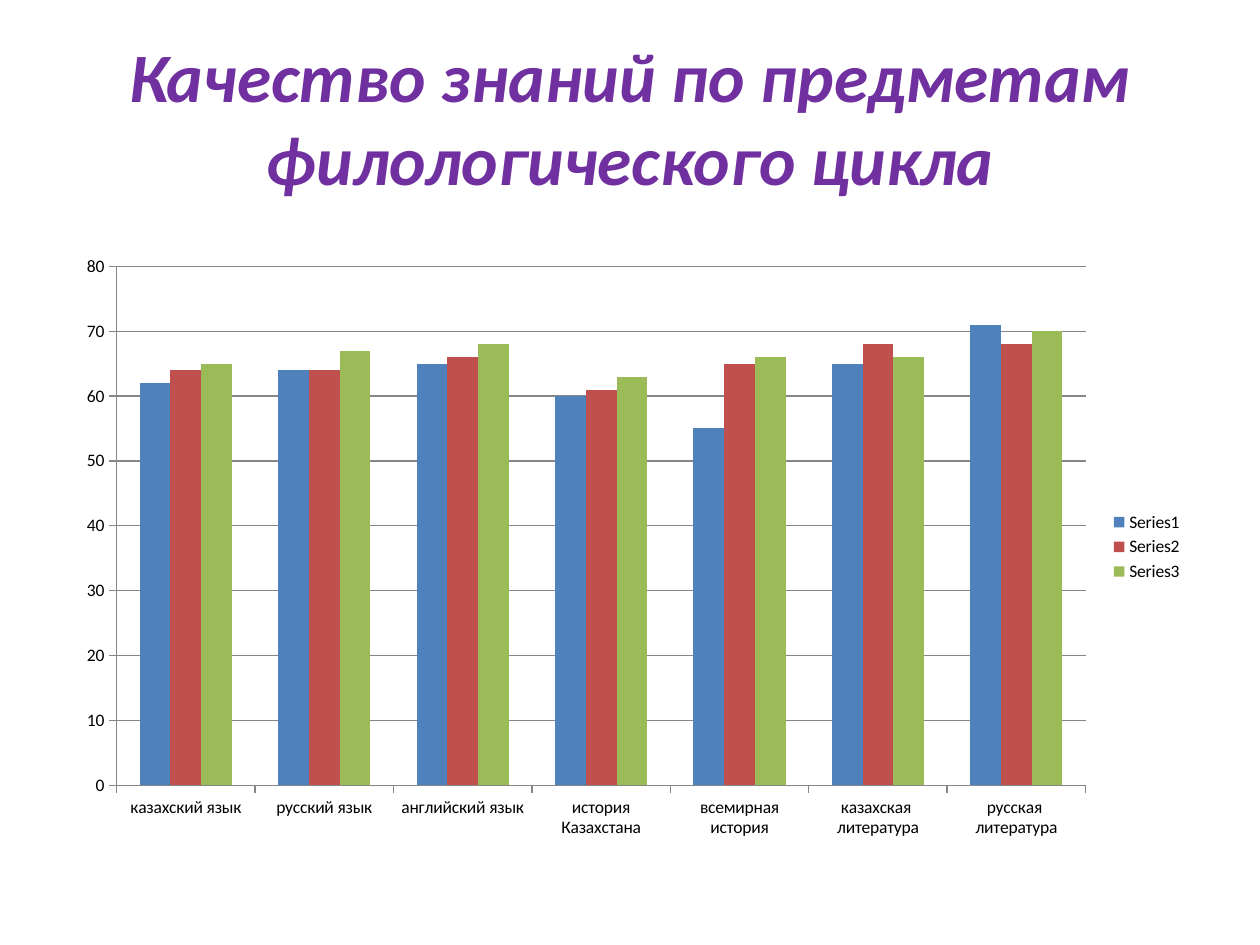
"""Build a slide that charts knowledge quality in the language and history subjects."""
from dataclasses import dataclass

from pptx import Presentation
from pptx import util as u
from pptx.chart import data as chart_data
from pptx.dml.color import RGBColor
from pptx.enum import chart as charts
from pptx.enum import text

FONT = "Calibri"
SUBJECTS = ["казахский язык", "русский язык", "английский язык", "история Казахстана",
            "всемирная история", "казахская  литература", "русская  литература"]


@dataclass
class Series:
    name: str
    colour: str
    values: list[int]


SERIES = [
    Series("Series1", "4F81BD", [62, 64, 65, 60, 55, 65, 71]),
    Series("Series2", "C0504D", [64, 64, 66, 61, 65, 68, 68]),
    Series("Series3", "9BBB59", [65, 67, 68, 63, 66, 66, 70]),
]


def rgb(colour: str) -> RGBColor:
    return RGBColor.from_string(colour)


def style_font(font, size: float, colour: str) -> None:
    font.name = FONT
    font.size = u.Pt(size)
    font.color.rgb = rgb(colour)


def style_line(line) -> None:
    line.color.rgb = rgb("868686")
    line.width = u.Pt(0.75)


def add_title(page, wording: str) -> None:
    box = page.shapes.title
    box.left, box.top = u.Inches(0.5), u.Inches(0.3)
    box.width, box.height = u.Inches(9), u.Inches(1.25)
    frame = box.text_frame
    frame.word_wrap = True
    frame.auto_size = text.MSO_AUTO_SIZE.NONE
    frame.vertical_anchor = text.MSO_ANCHOR.MIDDLE
    para = frame.paragraphs[0]
    para.alignment = text.PP_ALIGN.CENTER
    span = para.add_run()
    span.text = wording
    style_font(span.font, 39.6, "7030A0")
    span.font.bold = span.font.italic = True


def add_subject_chart(page, subjects: list[str], series_list: list[Series]) -> None:
    data = chart_data.CategoryChartData()
    data.categories = subjects
    for series in series_list:
        data.add_series(series.name, series.values)
    chart = page.shapes.add_chart(
        charts.XL_CHART_TYPE.COLUMN_CLUSTERED, u.Inches(0.51), u.Inches(1.94),
        u.Inches(8.98), u.Inches(4.8), data).chart
    style_font(chart.font, 10, "000000")
    chart.has_title = False
    chart.has_legend = True
    chart.legend.position = charts.XL_LEGEND_POSITION.RIGHT
    chart.legend.include_in_layout = False

    plot = chart.plots[0]
    plot.gap_width, plot.overlap = 150, 0
    plot.vary_by_categories = False
    for bars, series in zip(plot.series, series_list):
        bars.invert_if_negative = False
        bars.format.fill.solid()
        bars.format.fill.fore_color.rgb = rgb(series.colour)

    for axis in (chart.category_axis, chart.value_axis):
        axis.major_tick_mark = charts.XL_TICK_MARK.OUTSIDE
        axis.minor_tick_mark = charts.XL_TICK_MARK.NONE
        style_line(axis.format.line)
    scale = chart.value_axis
    scale.minimum_scale, scale.maximum_scale, scale.major_unit = 0, 80, 10
    scale.has_major_gridlines = True
    style_line(scale.major_gridlines.format.line)


def main() -> None:
    deck = Presentation()
    deck.slide_width, deck.slide_height = u.Inches(10), u.Inches(7.5)
    page = deck.slides.add_slide(deck.slide_layouts.get_by_name("Title Only"))
    add_title(page, "Качество знаний по предметам филологического цикла")
    add_subject_chart(page, SUBJECTS, SERIES)
    deck.save("out.pptx")


if __name__ == "__main__":
    main()
